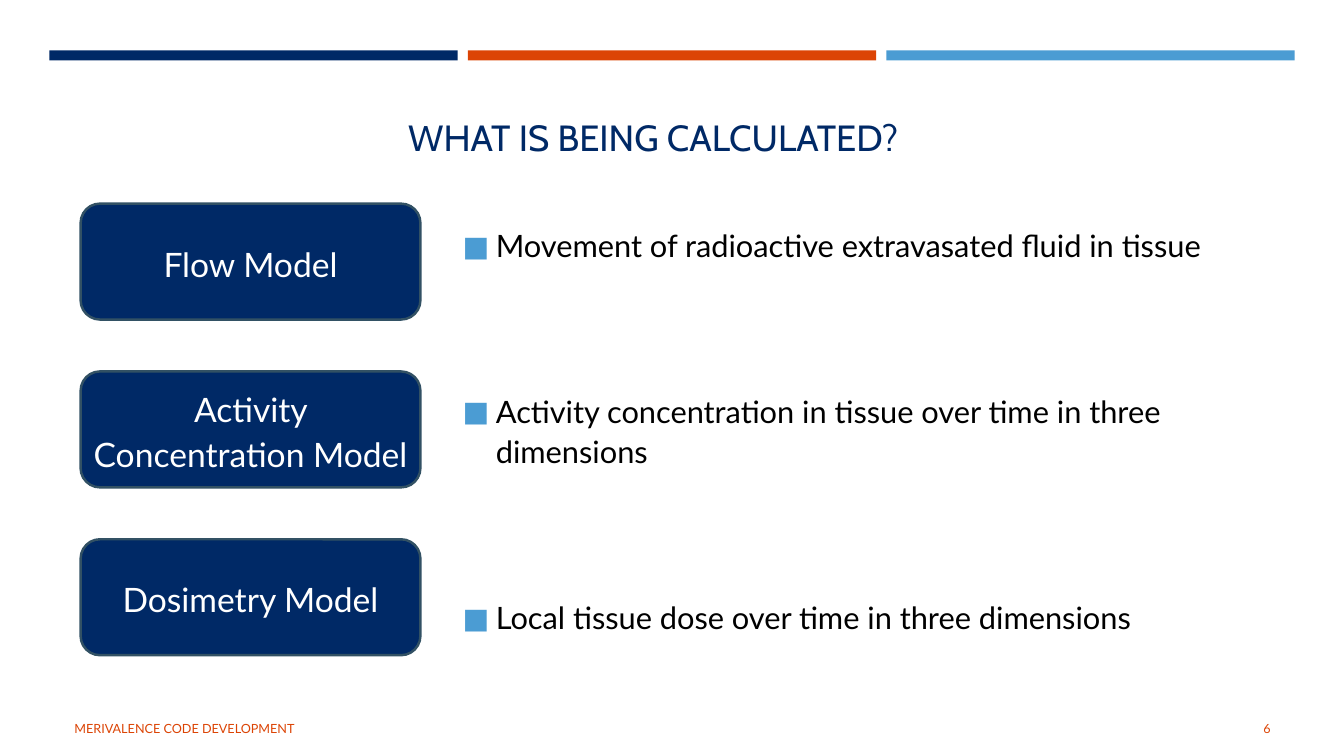
from dataclasses import dataclass

from lxml.etree import SubElement
from pptx import Presentation
from pptx.dml.color import RGBColor
from pptx.enum.shapes import MSO_SHAPE as Shape
from pptx.enum.text import MSO_ANCHOR as Anchor, PP_ALIGN as Align
from pptx.oxml.ns import qn
from pptx.util import Inches, Pt


@dataclass(frozen=True)
class Theme:
    navy: str = "002966"
    orange: str = "DC4405"
    sky: str = "4B9CD3"
    outline: str = "325164"
    black: str = "000000"
    white: str = "FFFFFF"
    heading_font: str = "Cabin"
    body_font: str = "Lato"
    title_size: int = 26
    label_size: int = 24
    body_size: int = 22
    footer_size: int = 9


THEME = Theme()
MODELS = [
    ("Flow Model", "Movement of radioactive extravasated fluid in tissue"),
    ("Activity Concentration Model",
     "Activity concentration in tissue over time in three dimensions"),
    ("Dosimetry Model", "Local tissue dose over time in three dimensions"),
]


def write_text(shape, lines, size, color, font=THEME.body_font, align=Align.LEFT,
               anchor=Anchor.MIDDLE, line_spacing=1.0, gap=0, side_inset=0.1):
    """Fill a shape with one paragraph per line, gap points apart."""
    frame = shape.text_frame
    frame.word_wrap = True
    frame.vertical_anchor = anchor
    frame.margin_left = frame.margin_right = Inches(side_inset)
    for index, line in enumerate(lines):
        paragraph = frame.add_paragraph() if index else frame.paragraphs[0]
        paragraph.alignment = align
        paragraph.line_spacing = line_spacing
        paragraph.space_before = Pt(gap if index else 0)
        run = paragraph.add_run()
        run.text = line
        run.font.name = font
        run.font.size = Pt(size)
        run.font.color.rgb = RGBColor.from_string(color)
    return frame


def add_text(slide, box, lines, **text_format):
    shape = slide.shapes.add_textbox(*map(Inches, box))
    return write_text(shape, lines, **text_format)


def add_block(slide, kind, box, fill, outline=None):
    shape = slide.shapes.add_shape(kind, *map(Inches, box))
    shape.shadow.inherit = False
    shape.fill.solid()
    shape.fill.fore_color.rgb = RGBColor.from_string(fill)
    if outline:
        shape.line.color.rgb = RGBColor.from_string(outline)
        shape.line.width = Pt(1.75)
    else:
        shape.line.fill.background()
    return shape


def set_square_bullet(paragraph, indent):
    properties = paragraph._p.get_or_add_pPr()
    properties.set("marL", str(Inches(indent)))
    properties.set("indent", str(-Inches(indent)))
    color = SubElement(properties, qn("a:buClr"))
    SubElement(color, qn("a:srgbClr")).set("val", THEME.sky)
    SubElement(properties, qn("a:buSzPct")).set("val", "92000")
    SubElement(properties, qn("a:buFont")).set("typeface", THEME.body_font)
    SubElement(properties, qn("a:buChar")).set("char", "■")


def add_top_bars(slide, left, top, width, height):
    gap = 0.1
    colors = (THEME.navy, THEME.orange, THEME.sky)
    bar_width = (width - gap * (len(colors) - 1)) / len(colors)
    for index, color in enumerate(colors):
        bar_left = left + index * (bar_width + gap)
        add_block(slide, Shape.RECTANGLE, (bar_left, top, bar_width, height), color)


def add_model_labels(slide, left, top, width, height):
    label_height = 1.15
    pitch = (height - label_height) / (len(MODELS) - 1)
    for index, (name, _) in enumerate(MODELS):
        box = (left, top + index * pitch, width, label_height)
        label = add_block(slide, Shape.ROUNDED_RECTANGLE, box, THEME.navy, THEME.outline)
        write_text(label, [name], size=THEME.label_size, color=THEME.white,
                   align=Align.CENTER, line_spacing=1.1, side_inset=0.04)


def add_descriptions(slide, *box):
    descriptions = [description for _, description in MODELS]
    frame = add_text(slide, box, descriptions, size=THEME.body_size,
                     color=THEME.black, line_spacing=1.1, gap=89.5)
    for paragraph in frame.paragraphs:
        set_square_bullet(paragraph, 0.33)


def add_footer(slide, left, top, width, height):
    number_width = 1.15
    style = dict(size=THEME.footer_size, color=THEME.orange)
    add_text(slide, (left, top, 7.56, height), ["MERIVALENCE CODE DEVELOPMENT"], **style)
    add_text(slide, (left + width - number_width, top, number_width, height), ["6"],
             align=Align.RIGHT, **style)


def main():
    presentation = Presentation()
    presentation.slide_width = Inches(13.33)
    presentation.slide_height = Inches(7.5)
    slide = presentation.slides.add_slide(presentation.slide_layouts[6])
    add_top_bars(slide, 0.49, 0.5, 12.35, 0.1)
    add_text(slide, (3.95, 0.98, 6.81, 0.64), ["WHAT IS BEING CALCULATED?"],
             size=THEME.title_size, color=THEME.navy, font=THEME.heading_font,
             anchor=Anchor.BOTTOM)
    add_descriptions(slide, 4.49, 2.3, 8.64, 3.92)
    add_footer(slide, 0.64, 7.03, 12.06, 0.4)
    add_model_labels(slide, 0.8, 2.02, 3.37, 4.48)
    presentation.save("out.pptx")


if __name__ == "__main__":
    main()
